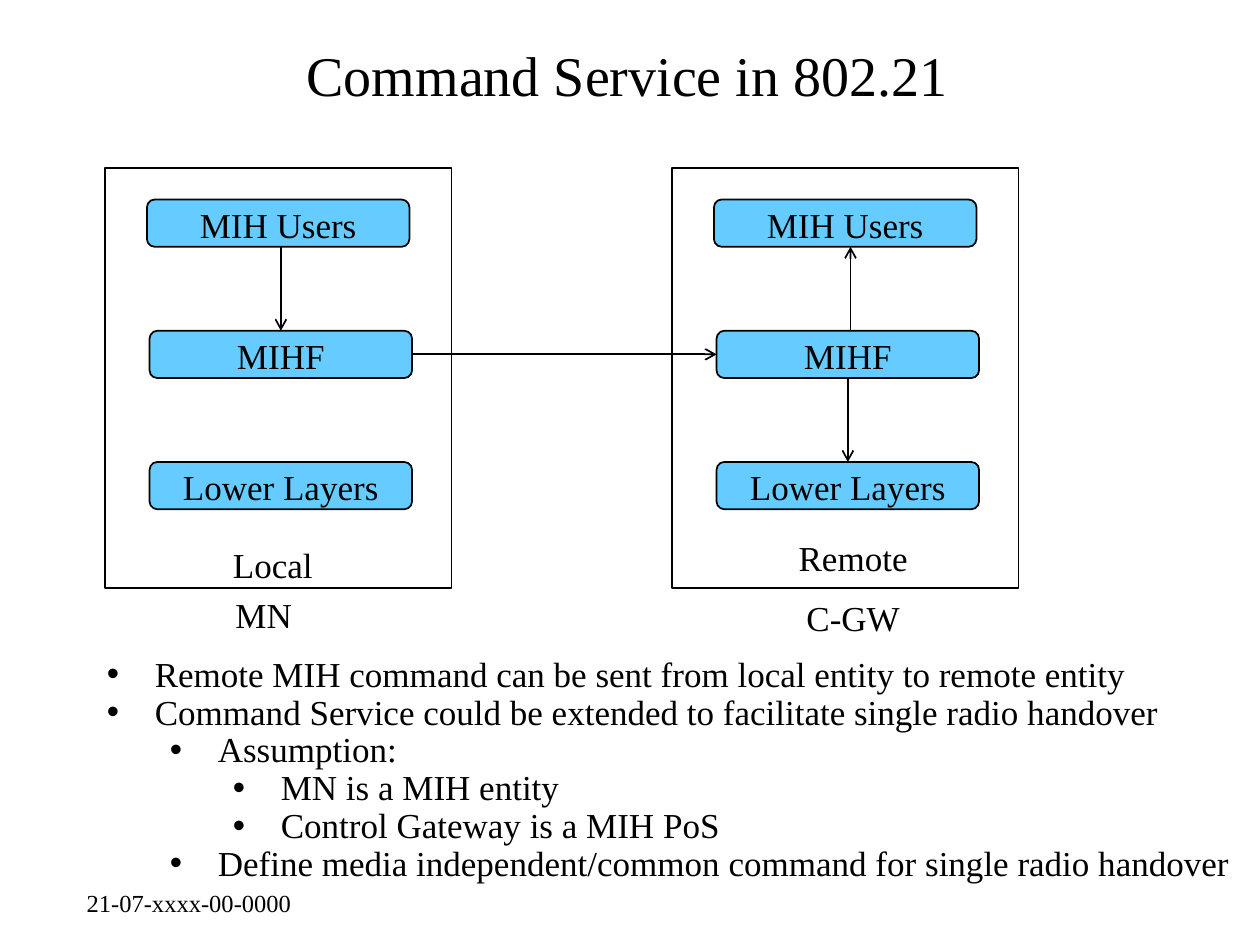
from lxml.etree import SubElement
from pptx import Presentation
from pptx.dml.color import RGBColor
from pptx.enum.shapes import MSO_CONNECTOR, MSO_SHAPE
from pptx.enum.text import MSO_ANCHOR, MSO_AUTO_SIZE, PP_ALIGN
from pptx.oxml.ns import qn
from pptx.util import Inches, Pt

BLACK = RGBColor(0x00, 0x00, 0x00)
BLUE = RGBColor(0x66, 0xCC, 0xFF)
FONT = "Times New Roman"
TOP, LEFT, BOTTOM, RIGHT = range(4)

# Grid: 24 cells to the inch
CELL = Inches(1) / 24
STEP = 108  # from the local stack to the remote one
ROWS = ("MIH Users", "MIHF", "Lower Layers")
POINTS = (
    (0, "Remote MIH command can be sent from local entity to remote entity"),
    (0, "Command Service could be extended to facilitate single radio handover"),
    (1, "Assumption:"),
    (2, "MN is a MIH entity"),
    (2, "Control Gateway is a MIH PoS"),
    (1, "Define media independent/common command for single radio handover"),
)


def grid(*cells):
    return [round(n * CELL) for n in cells]


def add_bullet(para, level):
    para.level = level
    props = para._p.get_or_add_pPr()
    props.set("marL", str(Inches(0.38 + 0.5 * level)))
    props.set("indent", str(-Inches(0.38)))
    SubElement(props, qn("a:buFont"), typeface="Arial")
    SubElement(props, qn("a:buChar"), char="•")


def write(frame, text, size=20, align=PP_ALIGN.LEFT, space=0.9, levels=None):
    for i, line in enumerate(text.split("\n")):
        para = frame.paragraphs[0] if i == 0 else frame.add_paragraph()
        para.alignment, para.line_spacing = align, space
        para.space_before = para.space_after = Pt(0)
        if levels:
            add_bullet(para, levels[i])
        run = para.add_run()
        run.text = line
        run.font.name, run.font.size = FONT, Pt(size)
        run.font.color.rgb = BLACK


def add_label(slide, cells, text, wrap=False, **style):
    frame = slide.shapes.add_textbox(*grid(*cells)).text_frame
    frame.word_wrap = wrap
    frame.auto_size = MSO_AUTO_SIZE.SHAPE_TO_FIT_TEXT
    write(frame, text, **style)


def add_box(slide, kind, cells, fill=None, text=None):
    box = slide.shapes.add_shape(kind, *grid(*cells))
    box.shadow.inherit = False
    box.line.color.rgb, box.line.width = BLACK, Pt(1)
    if fill:
        box.fill.solid()
        box.fill.fore_color.rgb = fill
    else:
        box.fill.background()
    if text:
        box.text_frame.vertical_anchor = MSO_ANCHOR.TOP
        write(box.text_frame, text, align=PP_ALIGN.CENTER)
    return box


def add_arrow(slide, cells, start=None, end=None):
    arrow = slide.shapes.add_connector(MSO_CONNECTOR.STRAIGHT, *grid(*cells))
    arrow.line.color.rgb, arrow.line.width = BLACK, Pt(1)
    SubElement(arrow.line._get_or_add_ln(), qn("a:tailEnd"), type="arrow")
    SubElement(arrow._element.spPr, qn("a:effectLst"))
    if start:
        arrow.begin_connect(*start)
    if end:
        arrow.end_connect(*end)


def add_stack(slide, shift):
    boxes = []
    for row, name in enumerate(ROWS):
        left = (28 if row == 0 else 28.5) + shift
        cells = (left, 38 + 25 * row, 50, 9)
        boxes.append(add_box(slide, MSO_SHAPE.ROUNDED_RECTANGLE, cells, BLUE, name))
    add_box(slide, MSO_SHAPE.RECTANGLE, (20 + shift, 32, 66, 80))
    return boxes


def add_title(slide, text):
    title = slide.shapes.title
    title.left, title.top, title.width, title.height = grid(11, 6, 217, 18)
    title.text_frame.vertical_anchor = MSO_ANCHOR.MIDDLE
    write(title.text_frame, text, size=32, align=PP_ALIGN.CENTER)


def main():
    deck = Presentation()
    deck.slide_width, deck.slide_height = Inches(10), Inches(7.5)
    slide = deck.slides.add_slide(deck.slide_layouts[5])
    add_title(slide, "Command Service in 802.21")

    # Document number
    add_label(slide, (10, 168, 52, 7.5), "21-07-xxxx-00-0000", wrap=True,
              size=14, align=PP_ALIGN.CENTER, space=1.0)

    # Local and remote stacks
    local = add_stack(slide, 0)
    remote = add_stack(slide, STEP)
    add_label(slide, (42, 103.25, 20, 9.5), "Local")
    add_label(slide, (149.75, 102, 25.75, 9.5), "Remote")

    # Command flow
    add_arrow(slide, (53.5, 47, 53.5, 63), end=(local[1], TOP))
    add_arrow(slide, (78.5, 67.5, 136.5, 67.5), (local[1], RIGHT), (remote[1], LEFT))
    add_arrow(slide, (161.5, 72, 161.5, 88), (remote[1], BOTTOM), (remote[2], TOP))
    add_arrow(slide, (162, 63, 162, 47))

    # Key points
    levels, lines = zip(*POINTS)
    add_label(slide, (18, 124, 220, 46), "\n".join(lines), levels=levels)

    # Node names
    add_label(slide, (42.5, 112.75, 15.5, 9.5), "MN")
    add_label(slide, (151.25, 113.25, 22.75, 9.5), "C-GW")
    deck.save("out.pptx")


if __name__ == "__main__":
    main()
